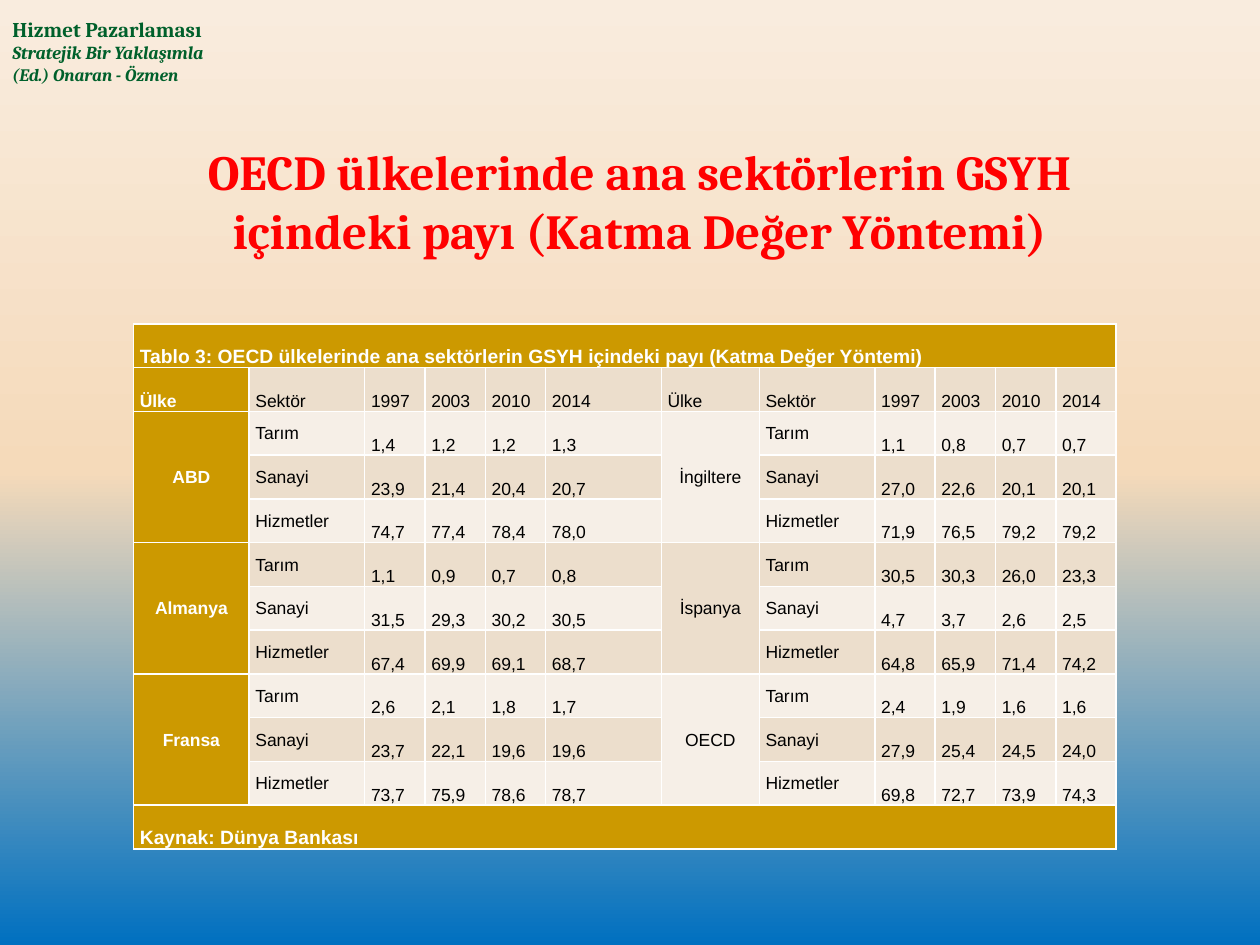
from copy import deepcopy
from pptx import Presentation
from pptx.dml.color import RGBColor
from pptx.enum.text import MSO_ANCHOR as Anchor, PP_ALIGN as Align
from pptx.util import Inches, Pt

BLUE = RGBColor(0x00, 0x70, 0xC0)
SAND = RGBColor(0xF5, 0xDA, 0xBA)
CREAM = RGBColor(0xF9, 0xEC, 0xDE)
GREEN = RGBColor(0x00, 0x60, 0x2B)
RED = RGBColor(0xFF, 0x00, 0x00)
GOLD = RGBColor(0xCC, 0x99, 0x00)
DARK = RGBColor(0xEC, 0xDE, 0xCC)
LIGHT = RGBColor(0xF6, 0xEF, 0xE7)
WHITE = RGBColor(0xFF, 0xFF, 0xFF)
BLACK = RGBColor(0x00, 0x00, 0x00)


def style(font, color, **form):
    font.color.rgb = color
    for key, val in form.items():
        setattr(font, key, val)


prs = Presentation()
prs.slide_width, prs.slide_height = Inches(10), Inches(7.5)
slide = prs.slides.add_slide(prs.slide_layouts[5])

# Background gradient, rising from blue to cream
back = slide.background.fill
back.gradient()
back.gradient_angle = 90
stops = back.gradient_stops
first = stops[0]._gs
first.addnext(deepcopy(first))
for stop, pos, color in zip(back.gradient_stops, (0, 0.5, 1), (BLUE, SAND, CREAM)):
    stop.position = pos
    stop.color.rgb = color

# Book name in the corner
book = slide.shapes.add_textbox(Inches(0), Inches(0.08), Inches(2.81), Inches(0.65))
frame = book.text_frame
frame.word_wrap = True
lines = [("Hizmet Pazarlaması", 12, False),
         ("Stratejik Bir Yaklaşımla", 10.5, True),
         ("(Ed.) Onaran - Özmen", 10, True)]
frame.text = "\n".join(line[0] for line in lines)
for para, (text, size, slant) in zip(frame.paragraphs, lines):
    style(para.runs[0].font, GREEN, name="Cambria", size=Pt(size), bold=True, italic=slant)

# Title
title = slide.shapes.title
title.left, title.top = Inches(1.14), Inches(1.1)
title.width, title.height = Inches(7.87), Inches(1.01)
frame = title.text_frame
frame.text = "OECD ülkelerinde ana sektörlerin GSYH içindeki payı (Katma Değer Yöntemi)"
frame.vertical_anchor = Anchor.BOTTOM
para = frame.paragraphs[0]
para.alignment = Align.CENTER
style(para.runs[0].font, RED, name="Cambria", size=Pt(28), bold=True)

# Table contents: each block is a pair of countries with three sectors
head = ["Ülke", "Sektör", "1997", "2003", "2010", "2014"]
sectors = ["Tarım", "Sanayi", "Hizmetler"]
blocks = [
    ("ABD", ["1,4 1,2 1,2 1,3", "23,9 21,4 20,4 20,7", "74,7 77,4 78,4 78,0"],
     "İngiltere", ["1,1 0,8 0,7 0,7", "27,0 22,6 20,1 20,1", "71,9 76,5 79,2 79,2"]),
    ("Almanya", ["1,1 0,9 0,7 0,8", "31,5 29,3 30,2 30,5", "67,4 69,9 69,1 68,7"],
     "İspanya", ["30,5 30,3 26,0 23,3", "4,7 3,7 2,6 2,5", "64,8 65,9 71,4 74,2"]),
    ("Fransa", ["2,6 2,1 1,8 1,7", "23,7 22,1 19,6 19,6", "73,7 75,9 78,6 78,7"],
     "OECD", ["2,4 1,9 1,6 1,6", "27,9 25,4 24,5 24,0", "69,8 72,7 73,9 74,3"]),
]
rows = [["Tablo 3: OECD ülkelerinde ana sektörlerin GSYH içindeki payı (Katma Değer Yöntemi)"],
        head * 2]
for left, lvals, right, rvals in blocks:
    for i, sector in enumerate(sectors):
        rows.append([left if i == 0 else "", sector, *lvals[i].split(),
                     right if i == 0 else "", sector, *rvals[i].split()])
rows.append(["Kaynak: Dünya Bankası"])

# Table grid
wide, slim = 0.92, 0.48
cols = [wide, wide, slim, slim, slim, wide, 0.78, wide] + [slim] * 4
last = len(rows) - 1
width, height = Inches(7.8), Inches(4.17)
table = slide.shapes.add_table(len(rows), len(cols), Inches(1.06), Inches(2.57),
                               width, height).table
for col, size in zip(table.columns, cols):
    col.width = int(width * size / sum(cols))
for row in table.rows:
    row.height = height // len(rows)

# Merged cells
for r in (0, last):
    table.cell(r, 0).merge(table.cell(r, len(cols) - 1))
for r in range(2, last, 3):
    for c in (0, 6):
        table.cell(r, c).merge(table.cell(r + 2, c))

# Cell fills and text
for r, row in enumerate(rows):
    for c in range(len(cols)):
        cell = table.cell(r, c)
        band = r in (0, last)
        gold = band or c == 0
        cell.fill.solid()
        cell.fill.fore_color.rgb = GOLD if gold else DARK if r % 2 else LIGHT
        if cell.is_spanned:
            continue
        body = 1 < r < last
        cell.margin_left = cell.margin_right = Inches(0.05)
        cell.margin_top = cell.margin_bottom = 0
        cell.vertical_anchor = Anchor.MIDDLE if body and c % 6 < 2 else Anchor.BOTTOM
        cell.text = row[c]
        para = cell.text_frame.paragraphs[0]
        para.line_spacing = 1.07
        para.alignment = Align.CENTER if body and c % 6 == 0 else Align.LEFT
        style(para.runs[0].font, WHITE if gold else BLACK, name="Arial",
              size=Pt(11 if band else 10), bold=gold)

prs.save("out.pptx")
